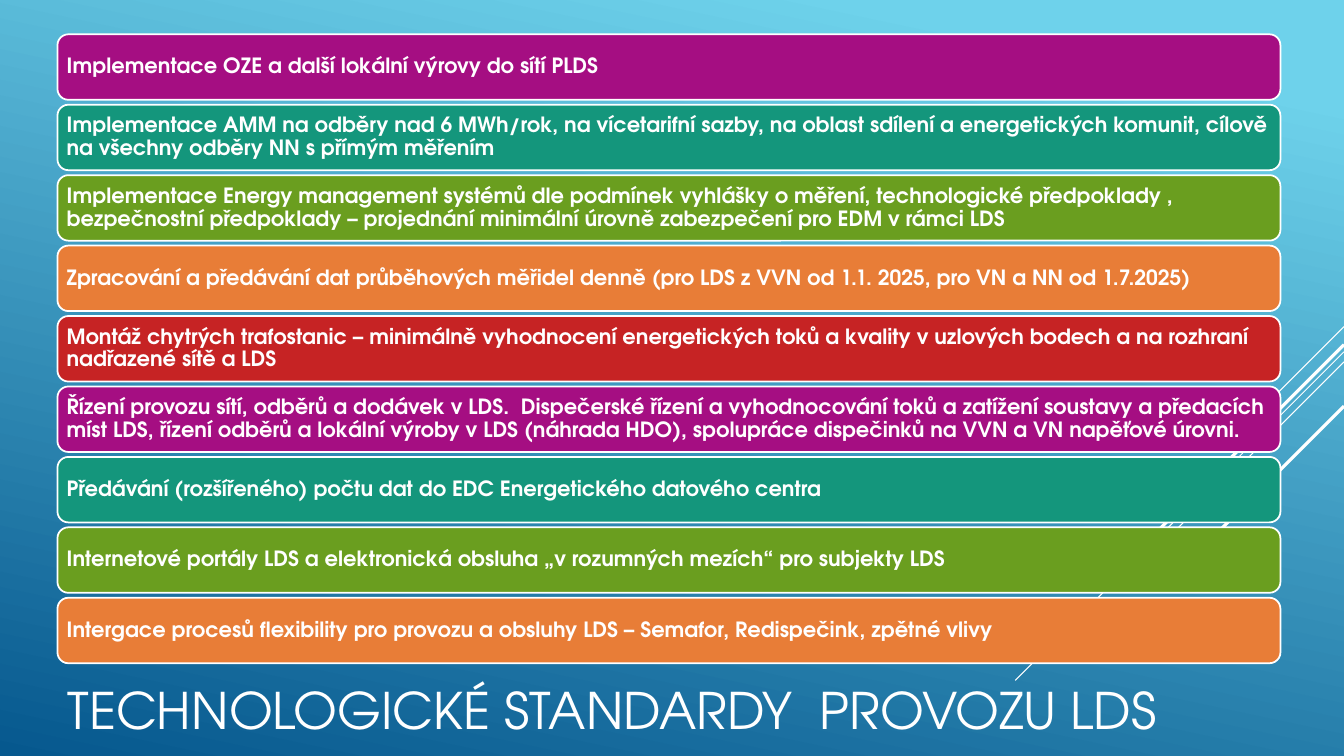
from lxml.etree import SubElement
from pptx import Presentation
from pptx.dml.color import RGBColor
from pptx.enum.shapes import MSO_CONNECTOR, MSO_SHAPE
from pptx.enum.text import MSO_ANCHOR as Anchor, MSO_AUTO_SIZE as AutoSize, PP_ALIGN as Align
from pptx.oxml.ns import qn
from pptx.util import Emu, Pt

PX = 9144  # 100 px to the inch
FONT = "TeX Gyre Adventor"
WHITE = "FFFFFF"
PURPLE, TEAL, GREEN, ORANGE, RED = "A50E82", "14967C", "6A9E1F", "E87D37", "C62324"

TITLE = "TECHNOLOGICKÉ STANDARDY  PROVOZU LDS"
STANDARDS = [
    (PURPLE, "Implementace OZE a další lokální výrovy do sítí PLDS"),
    (TEAL, "Implementace AMM na odběry nad 6 MWh/rok, na vícetarifní sazby, na oblast sdílení "
           "a energetických komunit, cílově na všechny odběry NN s přímým měřením"),
    (GREEN, "Implementace Energy management systémů dle podmínek vyhlášky o měření, "
            "technologické předpoklady , bezpečnostní předpoklady – projednání minimální "
            "úrovně zabezpečení pro EDM v rámci LDS"),
    (ORANGE, "Zpracování a předávání dat průběhových měřidel denně "
             "(pro LDS z VVN od 1.1. 2025, pro VN a NN od 1.7.2025)"),
    (RED, "Montáž chytrých trafostanic – minimálně vyhodnocení energetických toků a kvality "
          "v uzlových bodech a na rozhraní nadřazené sítě a LDS"),
    (PURPLE, "Řízení provozu sítí, odběrů a dodávek v LDS.  Dispečerské řízení a vyhodnocování "
             "toků a zatížení soustavy a předacích míst LDS, řízení odběrů a lokální výroby "
             "v LDS (náhrada HDO), spolupráce dispečinků na VVN a VN napěťové úrovni."),
    (TEAL, "Předávání (rozšířeného) počtu dat do EDC Energetického datového centra"),
    (GREEN, "Internetové portály LDS a elektronická obsluha „v rozumných mezích“ "
            "pro subjekty LDS"),
    (ORANGE, "Intergace procesů flexibility pro provozu a obsluhy LDS – Semafor, "
             "Redispečink, zpětné vlivy"),
]
# Diagonals start at the right edge: start height, horizontal run, line width
DIAGONALS = [(324, 100, 0.75), (349, 326, 0.75), (359, 207, 0.75),
             (342, 191, 2.25), (403, 139, 2.25)]
PAGE_WIDTH, PAGE_HEIGHT = 1333, 750
BAR_LEFT, BAR_WIDTH, BAR_HEIGHT = 57, 1213, 65
FIRST_TOP, LAST_TOP = 34, 593


def px(length):
    return Emu(round(length * PX))


def color(value):
    return RGBColor.from_string(value)


def format_text(frame, size, bold=False):
    frame.word_wrap = True
    frame.auto_size = AutoSize.NONE
    frame.vertical_anchor = Anchor.MIDDLE
    para = frame.paragraphs[0]
    para.alignment = Align.LEFT
    para.line_spacing = 0.9
    for span in para.runs:
        span.font.name = FONT
        span.font.size = Pt(size)
        span.font.bold = bold
        span.font.color.rgb = color(WHITE)


def paint_background(page):
    fill = page.background.fill
    fill.gradient()
    fill.gradient_angle = 258
    for stop, position, shade in zip(fill.gradient_stops, (0.1, 1), ("6ED2EB", "06588E")):
        stop.position = position
        stop.color.rgb = color(shade)


def add_diagonal(page, top, run, width):
    line = page.shapes.add_connector(
        MSO_CONNECTOR.STRAIGHT, px(PAGE_WIDTH), px(top), px(PAGE_WIDTH - run), px(top + run))
    line.line.color.rgb = color(WHITE)
    line.line.width = Pt(width)
    SubElement(line._element.spPr, qn("a:effectLst"))


def add_bar(page, top, shade, text):
    bar = page.shapes.add_shape(
        MSO_SHAPE.ROUNDED_RECTANGLE, px(BAR_LEFT), px(top), px(BAR_WIDTH), px(BAR_HEIGHT))
    bar.shadow.inherit = False
    bar.fill.solid()
    bar.fill.fore_color.rgb = color(shade)
    bar.line.color.rgb = color(WHITE)
    bar.line.width = Pt(1.25)
    frame = bar.text_frame
    frame.margin_left = frame.margin_right = px(6)
    frame.margin_top = frame.margin_bottom = px(6)
    frame.text = text
    format_text(frame, 15, bold=True)


def set_title(page):
    title = page.shapes.title
    title.left, title.top, title.width, title.height = px(57), px(657), px(1156), px(102)
    title.text_frame.text = TITLE
    format_text(title.text_frame, 36)


def main():
    deck = Presentation()
    deck.slide_width, deck.slide_height = px(PAGE_WIDTH), px(PAGE_HEIGHT)
    page = deck.slides.add_slide(deck.slide_layouts[5])

    # Backdrop
    paint_background(page)
    for top, run, width in DIAGONALS:
        add_diagonal(page, top, run, width)

    # Title and evenly spaced bars
    set_title(page)
    pitch = (LAST_TOP - FIRST_TOP) / (len(STANDARDS) - 1)
    for index, (shade, text) in enumerate(STANDARDS):
        add_bar(page, FIRST_TOP + index * pitch, shade, text)

    deck.save("out.pptx")


if __name__ == "__main__":
    main()
